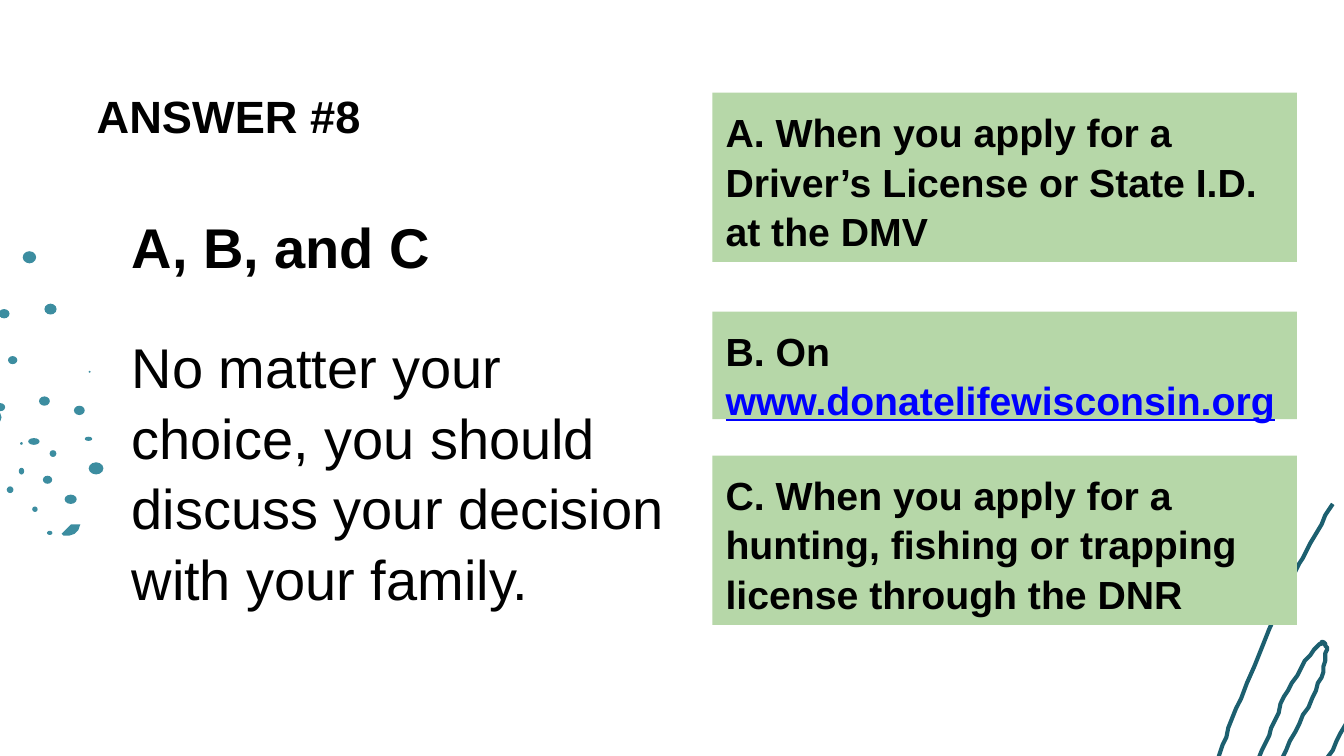
from pptx import Presentation
from pptx.dml.color import RGBColor
from pptx.enum.shapes import MSO_SHAPE as Shape
from pptx.enum.text import MSO_ANCHOR as Anchor, MSO_AUTO_SIZE as AutoSize, PP_ALIGN as Align
from pptx.util import Pt

DOTS = [
    (-8.6, 219.6, 9.4, 7.9), (10.8, 236.9, 1.4, 1.4), (10.1, 250.6, 2.9, 3.6),
    (17.3, 271.4, 2.9, 2.9), (25.2, 284.4, 2.9, 2.2), (34.6, 265, 6.5, 5),
    (23, 254.9, 5, 4.3), (3.6, 260.6, 3.6, 3.6), (26.6, 241.2, 3.6, 3.6),
    (15.1, 234.7, 6.1, 3.6), (20.9, 212.4, 5.8, 5), (-2.2, 216, 5, 4.3),
    (4.3, 190.8, 5, 4.3), (-0.7, 165.6, 5.8, 5), (47.5, 198.7, 1, 1),
    (39.6, 217.4, 5.8, 5), (45.4, 234, 4, 2.2), (47.5, 247.7, 7.9, 6.5),
    (23.8, 162.7, 6.5, 5.8), (12.2, 134.6, 7.2, 6.5),
]
LEAF = [
    (40.3, 280.8), (38.2, 280.8), (36, 282.9), (33.1, 285.8), (33.8, 287.3),
    (36.9, 286.8), (39.6, 285.8), (42.5, 283.5), (43.2, 280.8),
]
SCRIBBLE = [
    (714, 270), (700, 295), (687, 320.5), (665, 373.5), (654, 402), (652.5, 412),
    (654.5, 421), (661.5, 422.5), (668, 417), (679.5, 394), (690, 369.5),
    (703.5, 348.5), (709, 344.5), (710.5, 350), (706.5, 366.5), (693.5, 392.5),
    (680, 420), (669.5, 443), (670.5, 458), (680, 459.5), (689, 453.5), (701, 428),
    (713.5, 401.5), (728, 376), (742, 355.5), (748, 351.5), (750, 367), (739, 396),
    (727, 415), (713, 441), (701.5, 469.5), (700, 479.5), (705, 483), (715.5, 475.5),
    (723.5, 463), (736, 436.5), (762.5, 381.5), (776.5, 373.5), (780.5, 385),
    (775.5, 403), (749.5, 449.5), (734.5, 474.5), (727.5, 488.5), (729, 500),
    (741, 502), (751, 492.5), (793.5, 406.5),
]
ANSWERS = [
    (49.7, 90.7, ["A. When you apply for a Driver’s License or State I.D. at the DMV"]),
    (167, 57.6, ["B. On ", "www.donatelifewisconsin.org"]),
    (244.1, 90.7, ["C. When you apply for a hunting, fishing or trapping license through the DNR"]),
]


def color(value):
    return RGBColor.from_string(value)


def paint(shape, value):
    shape.shadow.inherit = False
    shape.fill.solid()
    shape.fill.fore_color.rgb = color(value)
    shape.line.fill.background()


def smooth_curve(points, steps=6):
    padded = [points[0], *points, points[-1]]
    curve = []
    for a, b, c, d in zip(padded, padded[1:], padded[2:], padded[3:]):
        for step in range(steps):
            t = step / steps
            curve.append(tuple(
                (2 * q + (r - p) * t + (2 * p - 5 * q + 4 * r - s) * t**2
                 + (3 * q - p - 3 * r + s) * t**3) / 2
                for p, q, r, s in zip(a, b, c, d)
            ))
    return curve + [points[-1]]


def add_outline(page, points, close):
    builder = page.shapes.build_freeform(*points[0], scale=Pt(1))
    builder.add_line_segments(points[1:], close=close)
    return builder.convert_to_shape()


def add_dots(page):
    paint(add_outline(page, LEAF, True), "3C8DA0")
    for dot in DOTS:
        paint(page.shapes.add_shape(Shape.OVAL, *map(Pt, dot)), "3C8DA0")


def add_scribble(page):
    scribble = add_outline(page, smooth_curve(SCRIBBLE), False)
    scribble.shadow.inherit = False
    scribble.fill.background()
    scribble.line.color.rgb = color("1C5F6F")
    scribble.line.width = Pt(2.2)


def prepare_frame(shape):
    frame = shape.text_frame
    frame.word_wrap = True
    frame.auto_size = AutoSize.NONE
    frame.vertical_anchor = Anchor.TOP
    frame.margin_left = frame.margin_right = Pt(7.2)
    frame.margin_top = frame.margin_bottom = Pt(7.2)
    return frame


def format_para(para, size, bold=True):
    para.alignment = Align.LEFT
    para.line_spacing = 1.05
    for span in para.runs:
        span.font.name = "Arial"
        span.font.size = Pt(size)
        span.font.bold = bold
        span.font.color.rgb = color("000000")


def add_title(page):
    title = page.shapes.title
    title.left, title.top, title.width, title.height = map(Pt, (44.6, 38.9, 642.2, 45.4))
    frame = prepare_frame(title)
    frame.text = "ANSWER #8"
    format_para(frame.paragraphs[0], 24.2)


def add_explanation(page):
    box = page.shapes.add_textbox(Pt(63.4), Pt(105.1), Pt(303.1), Pt(276.5))
    frame = prepare_frame(box)
    frame.text = "A, B, and C"
    format_para(frame.paragraphs[0], 30)
    para = frame.add_paragraph()
    para.text = "No matter your choice, you should discuss your decision with your family."
    format_para(para, 30, bold=False)
    para.space_before = Pt(26.5)


def add_answer(page, top, height, texts):
    box = page.shapes.add_shape(Shape.RECTANGLE, Pt(381.6), Pt(top), Pt(313.2), Pt(height))
    paint(box, "B6D7A8")
    para = prepare_frame(box).paragraphs[0]
    for text in texts:
        para.add_run().text = text
    format_para(para, 21)
    for span in para.runs[1:]:
        span.font.color.rgb = color("0000FF")
        span.font.underline = True


def main():
    deck = Presentation()
    deck.slide_width, deck.slide_height = Pt(720), Pt(405)
    page = deck.slides.add_slide(deck.slide_layouts[5])
    add_dots(page)
    add_scribble(page)
    add_title(page)
    add_explanation(page)
    for top, height, texts in ANSWERS:
        add_answer(page, top, height, texts)
    deck.save("out.pptx")


if __name__ == "__main__":
    main()
